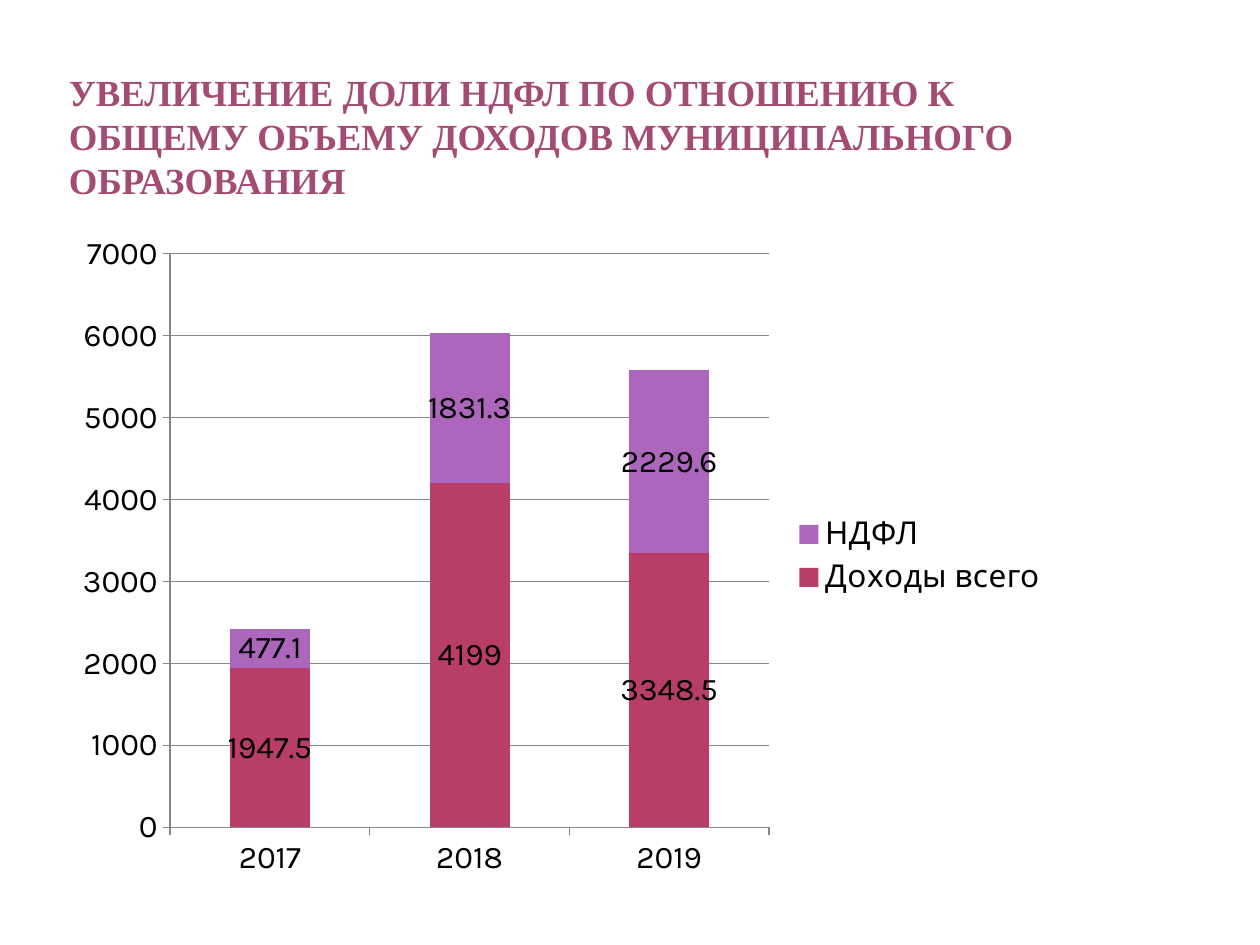
"""Build a slide on the share of personal income tax in municipal revenue."""
from dataclasses import dataclass

import pptx
import pptx.chart.data
import pptx.dml.color
import pptx.enum.chart
import pptx.enum.text
import pptx.util

EMU_PER_PX = 914400 / 126
AXIS_GREY = "868686"
YEARS = ("2017", "2018", "2019")


@dataclass(frozen=True)
class Box:
    """Position and size in px."""
    left: int
    top: int
    width: int
    height: int

    def emu(self) -> list[int]:
        """Return left, top, width and height in EMU."""
        return [px(n) for n in (self.left, self.top, self.width, self.height)]


@dataclass(frozen=True)
class Revenue:
    """One stacked series of yearly revenue."""
    name: str
    amounts: tuple[float, ...]
    color: str


TITLE_BOX = Box(63, 44, 998, 158)
CHART_BOX = Box(63, 222, 998, 668)
REVENUES = (
    Revenue("Доходы всего", (1947.5, 4199, 3348.5), "B83D68"),
    Revenue("НДФЛ", (477.1, 1831.3, 2229.6), "AC66BB"),
)


def px(length: int) -> int:
    """Turn px into EMU."""
    return round(length * EMU_PER_PX)


def rgb(color: str) -> pptx.dml.color.RGBColor:
    """Turn a hex string into a colour."""
    return pptx.dml.color.RGBColor.from_string(color)


def set_format(target, values: dict) -> None:
    """Set each named attribute on the target."""
    for name, value in values.items():
        setattr(target, name, value)


def set_font(font, name: str, size: int, color: str, bold: bool) -> None:
    """Set the face, size, colour and weight of a font."""
    set_format(font, {"name": name, "size": pptx.util.Pt(size), "bold": bold})
    font.color.rgb = rgb(color)


def add_title(slide, text: str) -> None:
    """Add the slide heading, resting on the bottom of its box."""
    frame = slide.shapes.add_textbox(*TITLE_BOX.emu()).text_frame
    set_format(frame, {
        "word_wrap": True,
        "vertical_anchor": pptx.enum.text.MSO_ANCHOR.BOTTOM,
        "margin_left": px(6), "margin_right": px(6),
        "margin_top": 0, "margin_bottom": 0,
    })
    heading = frame.paragraphs[0].add_run()
    heading.text = text
    set_font(heading.font, "Times New Roman", 21, "A34B73", True)


def style_axis(axis, gridlines: bool) -> None:
    """Set the ticks, line and gridlines of an axis."""
    set_format(axis, {
        "major_tick_mark": pptx.enum.chart.XL_TICK_MARK.OUTSIDE,
        "minor_tick_mark": pptx.enum.chart.XL_TICK_MARK.NONE,
        "has_major_gridlines": gridlines,
    })
    lines = [axis.format.line]
    if gridlines:
        lines.append(axis.major_gridlines.format.line)
    for line in lines:
        line.color.rgb = rgb(AXIS_GREY)
        line.width = pptx.util.Pt(0.75)


def add_revenue_chart(slide) -> None:
    """Add the stacked columns of revenue by year."""
    table = pptx.chart.data.CategoryChartData()
    table.categories = YEARS
    for revenue in REVENUES:
        table.add_series(revenue.name, revenue.amounts)
    chart = slide.shapes.add_chart(
        pptx.enum.chart.XL_CHART_TYPE.COLUMN_STACKED, *CHART_BOX.emu(), table
    ).chart
    set_font(chart.font, "Karla", 18, "000000", False)
    set_format(chart, {"has_title": False, "has_legend": True})
    set_format(chart.legend, {
        "position": pptx.enum.chart.XL_LEGEND_POSITION.RIGHT,
        "include_in_layout": False,
    })
    style_axis(chart.category_axis, False)
    style_axis(chart.value_axis, True)

    columns = chart.plots[0]
    set_format(columns, {"gap_width": 150, "overlap": 100, "vary_by_categories": False})
    for series, revenue in zip(columns.series, REVENUES):
        series.format.fill.solid()
        series.format.fill.fore_color.rgb = rgb(revenue.color)
        series.data_labels.show_value = True


def main() -> None:
    """Build and save the slide."""
    deck = pptx.Presentation()
    set_format(deck, {"slide_width": px(1260), "slide_height": px(945)})
    slide = deck.slides.add_slide(deck.slide_layouts[6])
    add_title(slide, "УВЕЛИЧЕНИЕ ДОЛИ НДФЛ ПО ОТНОШЕНИЮ К ОБЩЕМУ ОБЪЕМУ "
                     "ДОХОДОВ МУНИЦИПАЛЬНОГО ОБРАЗОВАНИЯ")
    add_revenue_chart(slide)
    deck.save("out.pptx")


if __name__ == "__main__":
    main()
